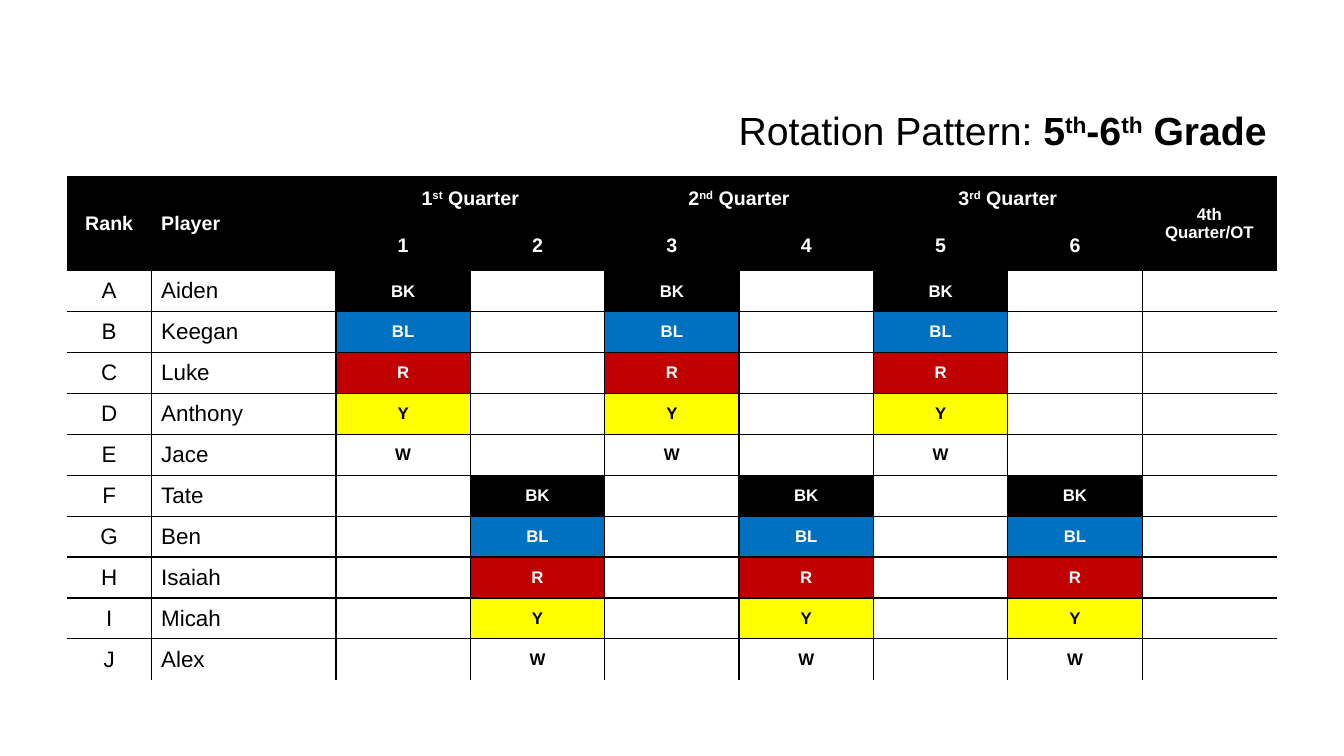
from lxml.etree import SubElement
from pptx import Presentation
from pptx.dml.color import RGBColor
from pptx.enum.text import MSO_ANCHOR, MSO_AUTO_SIZE, PP_ALIGN
from pptx.oxml.ns import qn
from pptx.util import Inches

from pptx.util import Pt

COLORS = {"black": "000000", "white": "FFFFFF", "blue": "0070C0",
          "red": "C00000", "yellow": "FFFF00"}
JERSEYS = [("BK", "black", "white"), ("BL", "blue", "white"), ("R", "red", "white"),
           ("Y", "yellow", "black"), ("W", "white", "black")]
PLAYERS = ["Aiden", "Keegan", "Luke", "Anthony", "Jace",
           "Tate", "Ben", "Isaiah", "Micah", "Alex"]
QUARTERS = ["1^st^ Quarter", "2^nd^ Quarter", "3^rd^ Quarter"]
HEADER_ROWS, FIRST_SHIFT, LAST = 2, 2, 8
ROWS = HEADER_ROWS + len(PLAYERS)


def write(frame, text, size=14, color="white", bold=True, align=PP_ALIGN.CENTER):
    paragraph = frame.paragraphs[0]
    paragraph.alignment = align
    for index, part in enumerate(text.split("^")):
        run = paragraph.add_run()
        run.text = part
        run.font.name = "Arial"
        run.font.size = Pt(size)
        run.font.bold = bold
        run.font.color.rgb = RGBColor.from_string(COLORS[color])
        if index % 2:
            run.font._element.set("baseline", "30000")


def paint(cell, row, column, color):
    properties = cell._tc.get_or_add_tcPr()
    inner = {"a:lnL": column > 0, "a:lnR": column < LAST,
             "a:lnT": row > 0, "a:lnB": row < ROWS - 1}
    for side, visible in inner.items():
        line = SubElement(properties, qn(side), w=str(Pt(1)))
        if visible:
            solid = SubElement(line, qn("a:solidFill"))
            SubElement(solid, qn("a:srgbClr"), val=COLORS["black"])
        else:
            SubElement(line, qn("a:noFill"))
    cell.fill.solid()
    cell.fill.fore_color.rgb = RGBColor.from_string(COLORS[color])
    cell.vertical_anchor = MSO_ANCHOR.MIDDLE


deck = Presentation()
deck.slide_width, deck.slide_height = Inches(13.333), Inches(7.5)
slide = deck.slides.add_slide(deck.slide_layouts[5])
unit = deck.slide_width / 80
margin = int(4 * unit)

title = slide.shapes.title
title.left, title.top = int(23.5 * unit), Inches(1)
title.width, title.height = int(52.5 * unit), Inches(0.57)
title.text_frame.word_wrap = True
title.text_frame.auto_size = MSO_AUTO_SIZE.SHAPE_TO_FIT_TEXT
title.text_frame.vertical_anchor = MSO_ANCHOR.TOP
write(title.text_frame, "Rotation Pattern:", size=28, color="black", bold=False,
      align=PP_ALIGN.RIGHT)
write(title.text_frame, " 5^th^-6^th^ Grade", size=28, color="black",
      align=PP_ALIGN.RIGHT)

rotation = slide.shapes.add_table(ROWS, LAST + 1, margin, Inches(1.75),
                                  int(72 * unit), Inches(4.93)).table
rotation._tbl.tblPr.find(qn("a:tableStyleId")).text = "{2D5ABB26-0587-4C30-8999-92F81FD0307C}"
for column, units in enumerate([5, 11] + [8] * 7):
    rotation.columns[column].width = int(units * unit)
for row in range(ROWS):
    header = row < HEADER_ROWS
    rotation.rows[row].height = Inches(0.435 if header else 0.406)
    for column in range(LAST + 1):
        paint(rotation.cell(row, column), row, column, "black" if header else "white")

for column, heading, size, align in [(0, "Rank", 14, PP_ALIGN.CENTER),
                                     (1, "Player", 14, PP_ALIGN.LEFT),
                                     (LAST, "4th Quarter/OT", 12, PP_ALIGN.CENTER)]:
    rotation.cell(0, column).merge(rotation.cell(1, column))
    write(rotation.cell(0, column).text_frame, heading, size=size, align=align)
for index, quarter in enumerate(QUARTERS):
    column = FIRST_SHIFT + 2 * index
    rotation.cell(0, column).merge(rotation.cell(0, column + 1))
    write(rotation.cell(0, column).text_frame, quarter)
for column in range(FIRST_SHIFT, LAST):
    write(rotation.cell(1, column).text_frame, str(column - 1))

for index, (rank, player) in enumerate(zip("ABCDEFGHIJ", PLAYERS)):
    row = HEADER_ROWS + index
    write(rotation.cell(row, 0).text_frame, rank, size=16, color="black", bold=False)
    write(rotation.cell(row, 1).text_frame, player, size=16, color="black", bold=False,
          align=PP_ALIGN.LEFT)
    group, place = divmod(index, len(JERSEYS))
    jersey, fill, ink = JERSEYS[place]
    for column in range(FIRST_SHIFT + group, LAST, 2):
        shift = rotation.cell(row, column)
        shift.fill.fore_color.rgb = RGBColor.from_string(COLORS[fill])
        write(shift.text_frame, jersey, size=12, color=ink)

deck.save("out.pptx")
